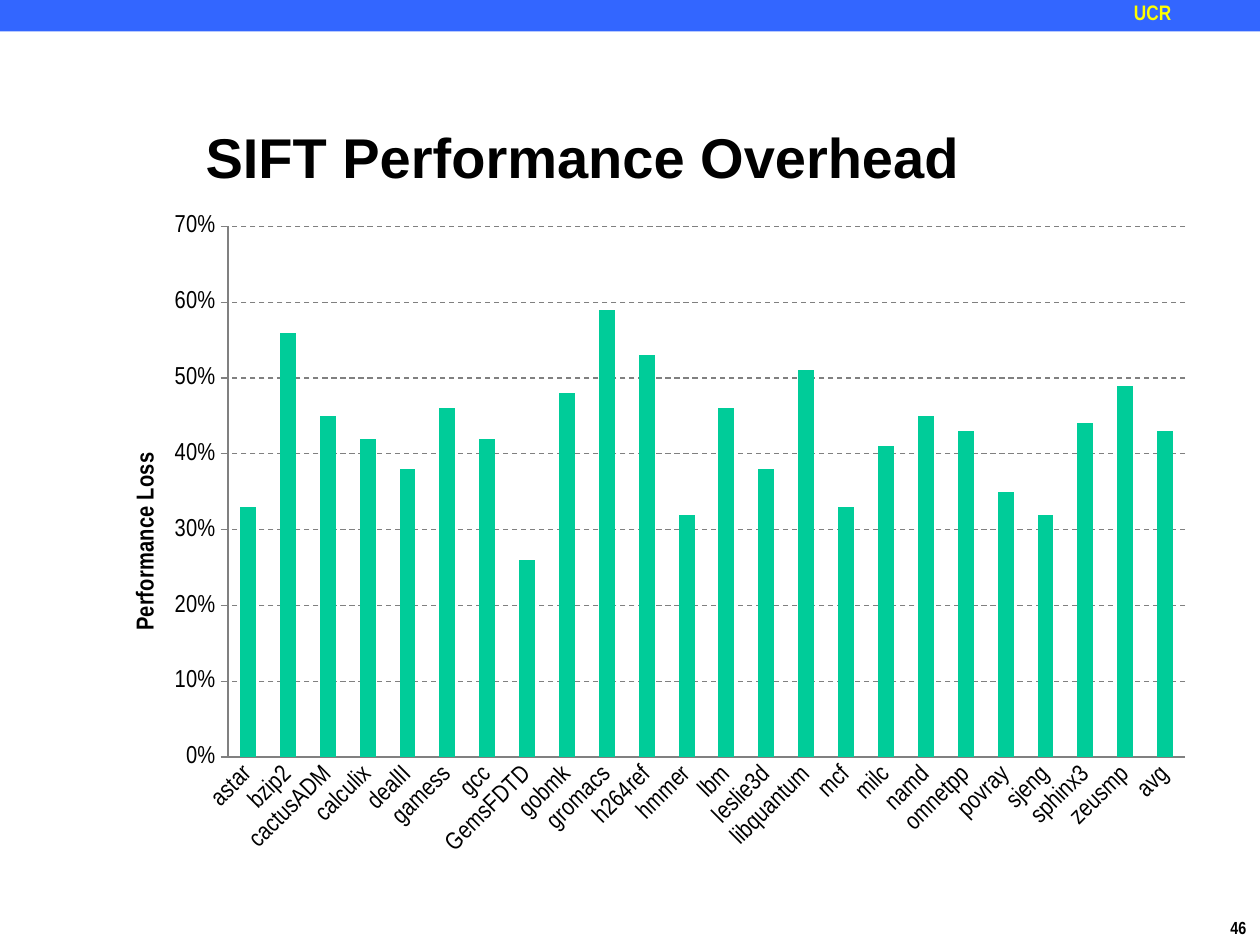
"""Build the SIFT performance overhead slide with its column chart."""
from lxml import etree
from pptx import Presentation
from pptx.chart.data import CategoryChartData
from pptx.dml.color import RGBColor
from pptx.enum.chart import XL_CHART_TYPE as ChartType, XL_TICK_MARK as TickMark
from pptx.enum.dml import MSO_LINE as LineStyle
from pptx.enum.shapes import MSO_SHAPE as ShapeType
from pptx.enum.text import MSO_ANCHOR as Anchor, MSO_AUTO_SIZE as AutoSize, PP_ALIGN as Align
from pptx.oxml import parse_xml
from pptx.oxml.ns import nsdecls
from pptx.util import Pt

BLACK = RGBColor(0x00, 0x00, 0x00)
BLUE = RGBColor(0x33, 0x66, 0xFF)
YELLOW = RGBColor(0xFF, 0xFF, 0x00)
GREEN = RGBColor(0x00, 0xCC, 0x99)
GRAY = RGBColor(0x80, 0x80, 0x80)
NARROW = "Arial Narrow"

LOSSES = {
    "astar": 0.33, "bzip2": 0.56, "cactusADM": 0.45, "calculix": 0.42,
    "dealII": 0.38, "gamess": 0.46, "gcc": 0.42, "GemsFDTD": 0.26,
    "gobmk": 0.48, "gromacs": 0.59, "h264ref": 0.53, "hmmer": 0.32,
    "lbm": 0.46, "leslie3d": 0.38, "libquantum": 0.51, "mcf": 0.33,
    "milc": 0.41, "namd": 0.45, "omnetpp": 0.43, "povray": 0.35,
    "sjeng": 0.32, "sphinx3": 0.44, "zeusmp": 0.49, "avg": 0.43,
}


def style_font(font, name, size, color, bold):
    font.name = name
    font.size = Pt(size)
    font.color.rgb = color
    font.bold = bold


def manual_layout(x, y, extra=""):
    return parse_xml(
        f'<c:layout {nsdecls("c")}><c:manualLayout>{"" if not extra else "<c:layoutTarget val=%sinner%s/>" % (chr(34), chr(34))}'
        f'<c:xMode val="edge"/><c:yMode val="edge"/><c:x val="{x}"/><c:y val="{y}"/>{extra}'
        '</c:manualLayout></c:layout>')


presentation = Presentation()
presentation.slide_width = Pt(720)
presentation.slide_height = Pt(540)
slide = presentation.slides.add_slide(presentation.slide_layouts[5])

band = slide.shapes.add_shape(ShapeType.RECTANGLE, Pt(0), Pt(0), Pt(720), Pt(18))
band.shadow.inherit = False
band.fill.solid()
band.fill.fore_color.rgb = BLUE
band.line.fill.background()

labels = [
    ("UCR", (648, 0, 72, 16), 12, YELLOW, 0, True),
    ("46", (696, 520.5, 24, 19.5), 10, BLACK, 7.2, False),
]
for text, box, size, color, inset, wrap in labels:
    label = slide.shapes.add_textbox(*map(Pt, box))
    frame = label.text_frame
    frame.text = text
    frame.word_wrap = wrap
    frame.margin_left = frame.margin_right = Pt(inset)
    frame.margin_top = frame.margin_bottom = Pt(inset / 2)
    style_font(frame.paragraphs[0].runs[0].font, NARROW, size, color, True)

title = slide.shapes.title
title.left, title.top, title.width, title.height = map(Pt, (72, 70.5, 522, 48))
title_frame = title.text_frame
title_frame.text = "SIFT Performance Overhead"
title_frame.auto_size = AutoSize.NONE
title_frame.vertical_anchor = Anchor.TOP
title_paragraph = title_frame.paragraphs[0]
title_paragraph.alignment = Align.CENTER
title_paragraph.line_spacing = 0.9
style_font(title_paragraph.runs[0].font, "Arial", 32, BLACK, True)

chart_data = CategoryChartData(number_format="0%")
chart_data.categories = list(LOSSES)
chart_data.add_series("Series 1", list(LOSSES.values()))
chart = slide.shapes.add_chart(
    ChartType.COLUMN_CLUSTERED, Pt(54), Pt(114), Pt(636), Pt(384), chart_data).chart
chart.has_legend = False
chart.has_title = False
style_font(chart.font, NARROW, 10, BLACK, False)

plot = chart.plots[0]
plot.gap_width = 150
plot.vary_by_categories = False
bars = plot.series[0].format.fill
bars.solid()
bars.fore_color.rgb = GREEN

category_axis, value_axis = chart.category_axis, chart.value_axis
category_axis.major_tick_mark = TickMark.NONE
value_axis.major_tick_mark = TickMark.OUTSIDE
for axis in (category_axis, value_axis):
    style_font(axis.tick_labels.font, NARROW, 14, BLACK, False)
    axis.format.line.color.rgb = GRAY
    axis.format.line.width = Pt(0.75)
category_axis.tick_labels.font._element.getparent().getparent().getparent().find(
    "{*}bodyPr").set("rot", "-2700000")

value_axis.minimum_scale = 0
value_axis.maximum_scale = 0.7
value_axis.major_unit = 0.1
value_axis.tick_labels.number_format = "0%"
value_axis.tick_labels.number_format_is_linked = False
gridline = value_axis.major_gridlines.format.line
gridline.color.rgb = GRAY
gridline.width = Pt(0.75)
gridline.dash_style = LineStyle.DASH

axis_title = value_axis.axis_title
axis_title.text_frame.text = "Performance Loss"
style_font(axis_title.text_frame.paragraphs[0].runs[0].font, NARROW, 14, BLACK, True)
axis_title.text_frame._txBody.find("{*}bodyPr").set("rot", "-5400000")

plot_area = chart._chartSpace.chart.plotArea
layouts = [
    (plot_area, 0, manual_layout(0.12, 0.04, '<c:w val="0.86"/><c:h val="0.79"/>')),
    (axis_title._element, 1, manual_layout(0.03, 0.37)),
]
for parent, position, layout in layouts:
    for previous in parent.findall(etree.QName(layout).text):
        parent.remove(previous)
    parent.insert(position, layout)

presentation.save("out.pptx")
